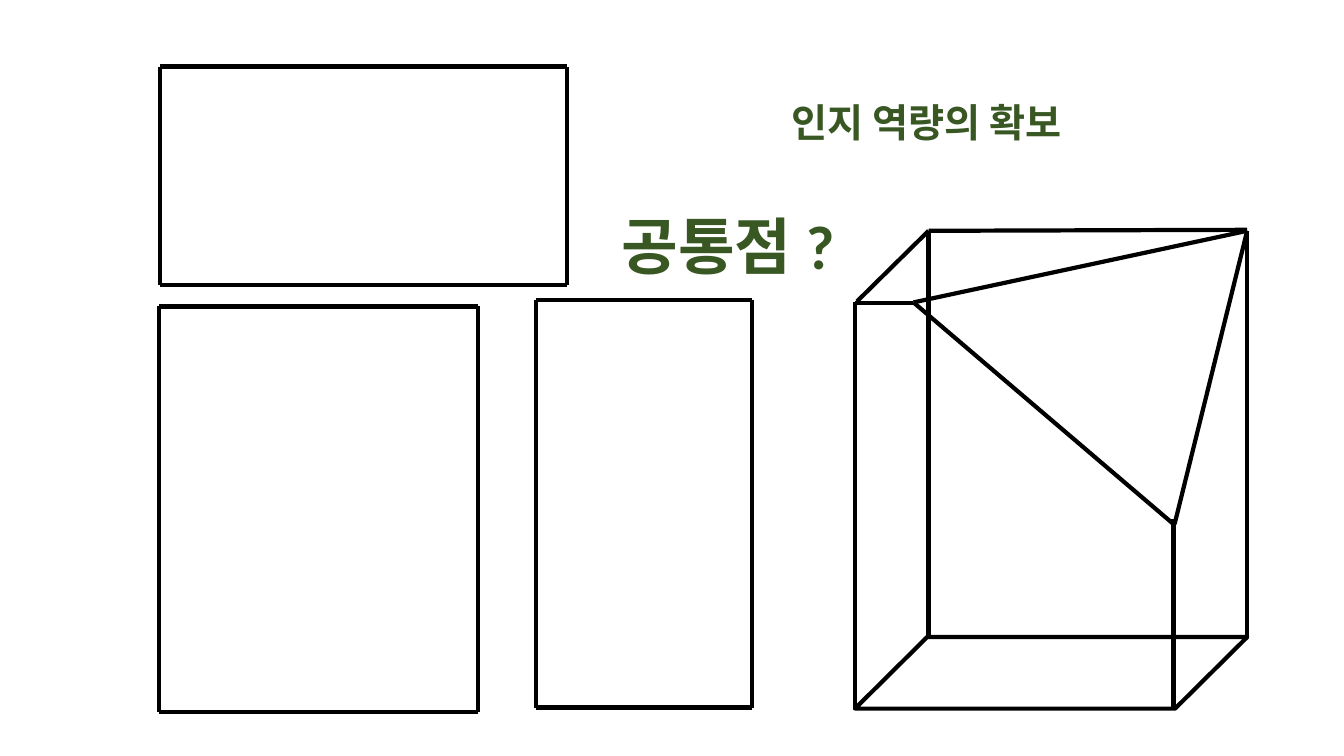
from pptx import Presentation
from pptx.util import Inches, Pt
from pptx.dml.color import RGBColor as RGB
from pptx.enum.shapes import MSO_CONNECTOR as Conn, MSO_SHAPE as Shape
from pptx.enum.text import MSO_ANCHOR as Anchor, PP_ALIGN as Align
from pptx.oxml.ns import qn
from lxml.etree import SubElement

INK = {"line": "000000", "text": "385723"}

deck = Presentation()
deck.slide_width, deck.slide_height = Inches(13.33), Inches(7.5)
slide = deck.slides.add_slide(deck.slide_layouts[6])


def edge(group, *ends):
    line = group.shapes.add_connector(Conn.STRAIGHT, *map(Inches, ends))
    line.line.color.rgb = RGB.from_string(INK["line"])
    line.line.width = Pt(3)
    SubElement(line._element.spPr, qn("a:effectLst"))


def write(text, box, size, space, anchor=Anchor.TOP):
    frame = slide.shapes.add_textbox(*map(Inches, box)).text_frame
    frame.word_wrap = True
    frame.vertical_anchor = anchor
    para = frame.paragraphs[0]
    para.alignment, para.line_spacing = Align.CENTER, space
    run = para.add_run()
    run.text = text
    font = run.font
    font.name, font.size, font.bold = "Calibri", Pt(size), True
    font.color.rgb = RGB.from_string(INK["text"])


# Cut block: depth runs from the front face to the back face
left, right, top, low = 8.48, 12.37, 2.29, 7.03
depth = 0.71
back, front = left + 0.73, right - 0.73
brow, floor = top + depth, low - depth
notch, drop = 9.06, 5.2

block = slide.shapes.add_group_shape()
base = block.shapes.add_shape(
    Shape.PARALLELOGRAM, *map(Inches, (left, floor, right - left, depth)))
base.adjustments[0] = 1.008
base.shadow.inherit = False
base.fill.background()
base.line.color.rgb = RGB.from_string(INK["line"])
base.line.width = Pt(3)
for ends in (
    (back, top, right, top - 0.01),
    (front, drop - 0.05, front, low),
    (left, brow, left, low),
    (back, top, back, floor),
    (right, top, right, floor),
    (back, top, left + 0.02, brow - 0.01),
    (notch, brow + 0.01, left, brow + 0.01),
    # Cut face
    (notch, brow, front, drop),
    (notch, brow, right, top),
    (front + 0.01, drop, right, top),
):
    edge(block, *ends)

# Three views: left, top, right, bottom
for x1, y1, x2, y2 in (
    (1.58, 3.04, 4.74, 7.06),
    (5.32, 2.98, 7.46, 7.02),
    (1.59, 0.66, 5.62, 2.83),
):
    view = slide.shapes.add_group_shape()
    for x in (x1, x2):
        edge(view, x, y1, x, y2)
    for y in (y1, y2):
        edge(view, x1, y, x2, y)

# Words
write("공통점 ?", (6.01, 2.06, 2.42, 0.83), 44, 0.9, Anchor.MIDDLE)
write("인지 역량의 확보", (6.01, 0.88, 6.35, 0.83), 28, 1.1)

deck.save("out.pptx")
